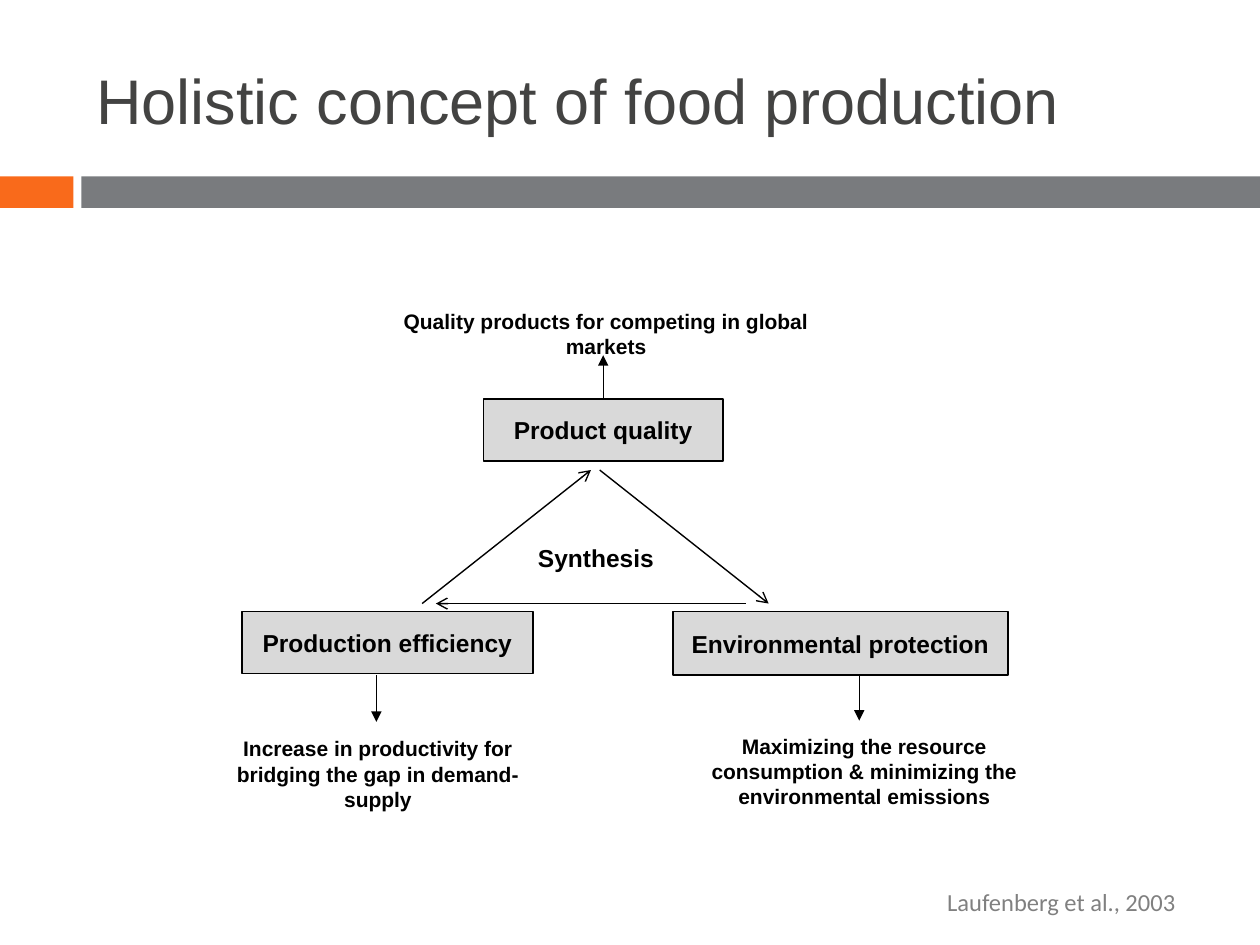
import pptx
import pptx.util
import pptx.dml.color
import pptx.enum.shapes
import pptx.enum.text
import pptx.oxml
import pptx.oxml.ns

Pt = pptx.util.Pt
ANCHOR = pptx.enum.text.MSO_ANCHOR
ALIGN = pptx.enum.text.PP_ALIGN
TINT = {
    "accent": "F96A1B",
    "band": "797B7E",
    "title": "434342",
    "box": "D9D9D9",
    "ink": "000000",
    "source": "808080",
}


def color(name):
    return pptx.dml.color.RGBColor.from_string(TINT[name])


def write(shape, text, size, tint="ink", font="Arial", bold=True,
          align=ALIGN.CENTER, anchor=ANCHOR.TOP):
    frame = shape.text_frame
    frame.word_wrap = True
    frame.vertical_anchor = anchor
    para = frame.paragraphs[0]
    para.alignment = align
    run = para.add_run()
    run.text = text
    run.font.size = Pt(size)
    run.font.name = font
    run.font.bold = bold
    run.font.color.rgb = color(tint)


def add_rect(slide, area, fill):
    kind = pptx.enum.shapes.MSO_SHAPE.RECTANGLE
    rect = slide.shapes.add_shape(kind, *map(Pt, area))
    rect.shadow.inherit = False
    rect.fill.solid()
    rect.fill.fore_color.rgb = color(fill)
    rect.line.fill.background()
    return rect


def add_box(slide, area, text):
    box = add_rect(slide, area, "box")
    box.line.color.rgb = color("ink")
    box.line.width = Pt(1)
    write(box, text, 14, anchor=ANCHOR.MIDDLE)
    return box


def add_text(slide, area, text, size, **style):
    write(slide.shapes.add_textbox(*map(Pt, area)), text, size, **style)


def add_arrow(slide, start, end, head):
    kind = pptx.enum.shapes.MSO_CONNECTOR.STRAIGHT
    arrow = slide.shapes.add_connector(kind, *map(Pt, start + end))
    arrow.line.color.rgb = color("ink")
    arrow.line.width = Pt(0.79)
    tail = pptx.oxml.parse_xml(
        f'<a:tailEnd {pptx.oxml.ns.nsdecls("a")} type="{head}"/>')
    arrow.line._get_or_add_ln().append(tail)
    props = arrow._element.spPr
    props.append(props.makeelement(pptx.oxml.ns.qn("a:effectLst"), {}))
    return arrow


def main():
    deck = pptx.Presentation()
    deck.slide_width, deck.slide_height = Pt(720), Pt(540)
    slide = deck.slides.add_slide(deck.slide_layouts[6])

    # Title and band
    add_rect(slide, (0, 100.8, 42, 18), "accent")
    add_rect(slide, (46.5, 100.8, 673.5, 18), "band")
    add_text(slide, (48, 18, 642, 78), "Holistic concept of food production",
             36, tint="title", bold=False, align=ALIGN.LEFT,
             anchor=ANCHOR.MIDDLE)

    # Three goals
    top = add_box(slide, (276.3, 228, 136.8, 35.5), "Product quality")
    add_box(slide, (138.2, 349.4, 166.5, 35.5), "Production efficiency")
    add_box(slide, (384.5, 349.4, 191.5, 36.5), "Environmental protection")

    # Cycle between the goals
    for start, end in (
        ((342.7, 268.6), (439.2, 344.9)),
        ((241.2, 344.9), (337.7, 268.6)),
        ((426.2, 344.9), (249.1, 344.9)),
    ):
        add_arrow(slide, start, end, "arrow")
    add_text(slide, (296.6, 306.7, 88, 23), "Synthesis", 14)

    # Outcomes
    for area, text in (
        ((200.9, 172.8, 290.9, 29.5),
         "Quality products for competing in global markets"),
        ((122.4, 417, 187.2, 49.7),
         "Increase in productivity for bridging the gap in demand-supply"),
        ((388.8, 415.4, 210.2, 51),
         "Maximizing the resource consumption & minimizing the "
         "environmental emissions"),
    ):
        add_text(slide, area, text, 12)
    rise = add_arrow(slide, (344.7, 228), (344.7, 203), "triangle")
    rise.begin_connect(top, 0)
    for x, y in ((215.1, 385.9), (491, 385.2)):
        add_arrow(slide, (x, y), (x, y + 26.6), "triangle")

    # Source
    add_text(slide, (534.2, 503.3, 156.2, 24.5), "Laufenberg et al., 2003",
             14, tint="source", font="Calibri", bold=False, align=ALIGN.LEFT)

    deck.save("out.pptx")


if __name__ == "__main__":
    main()
